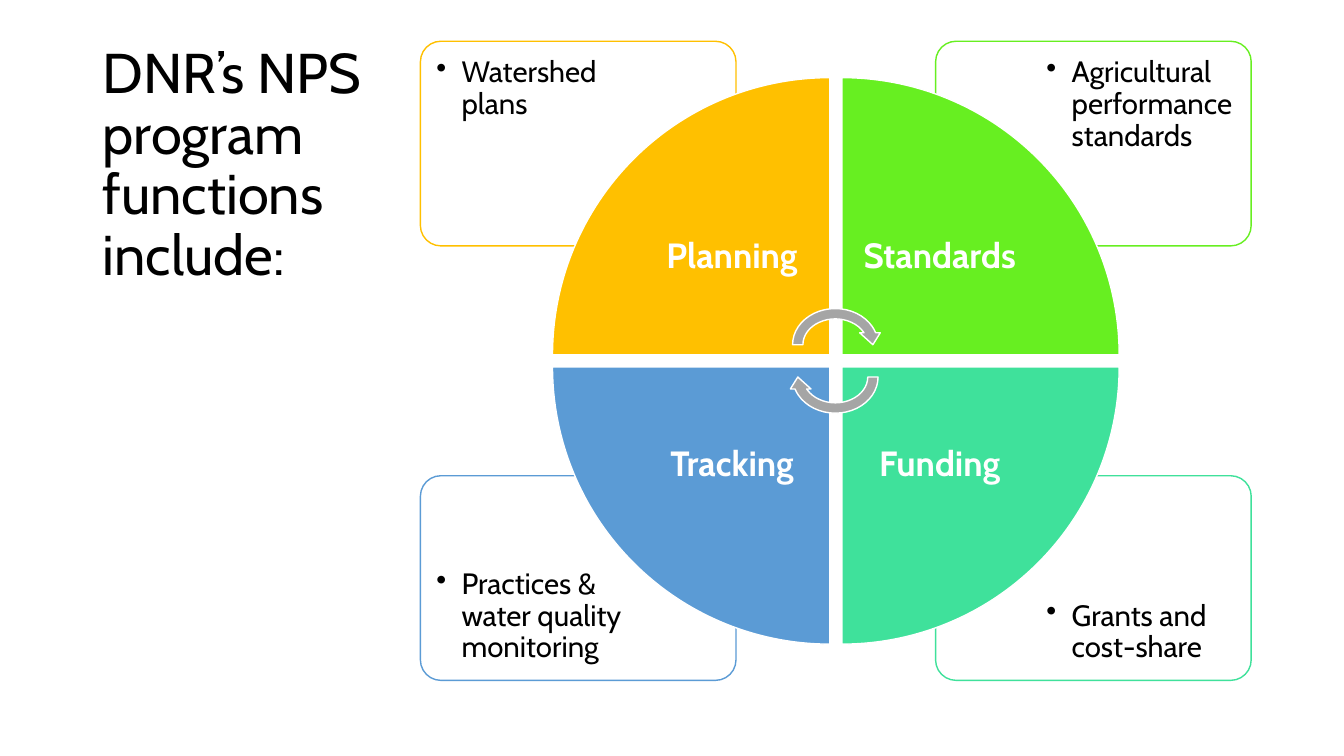
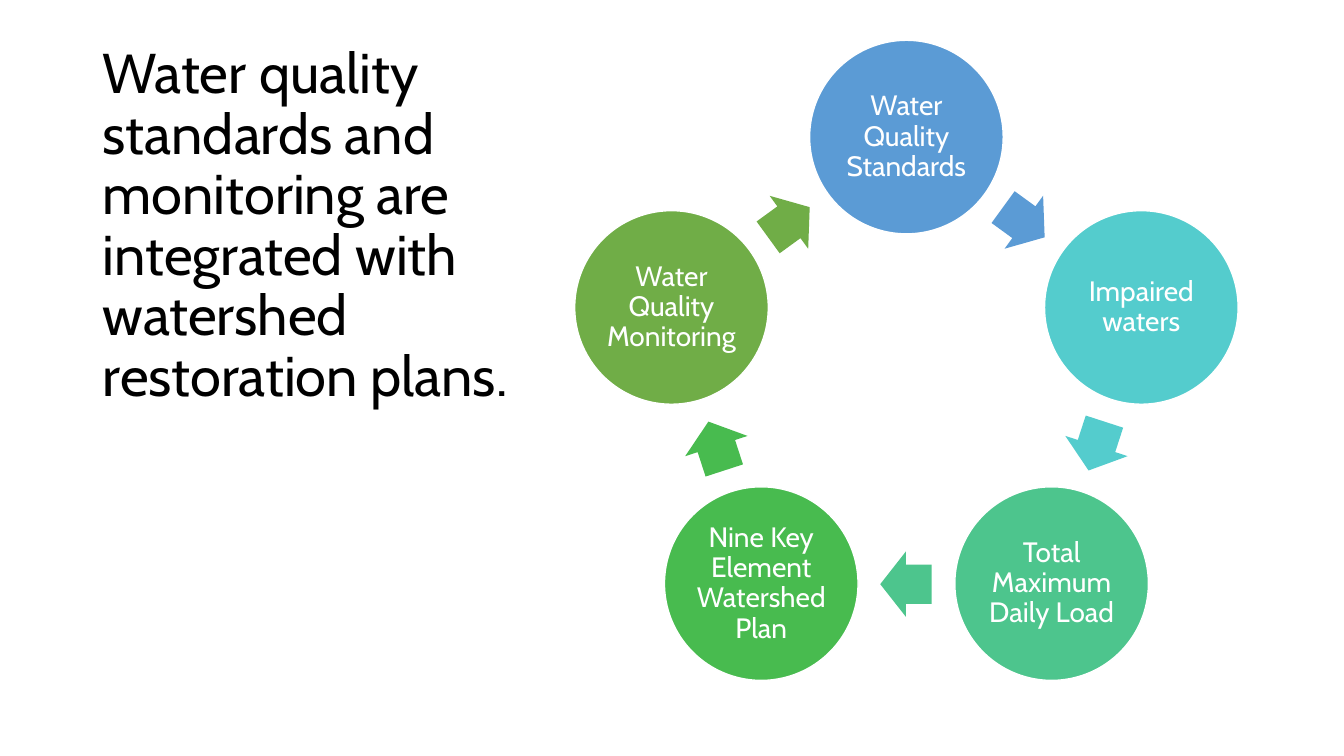
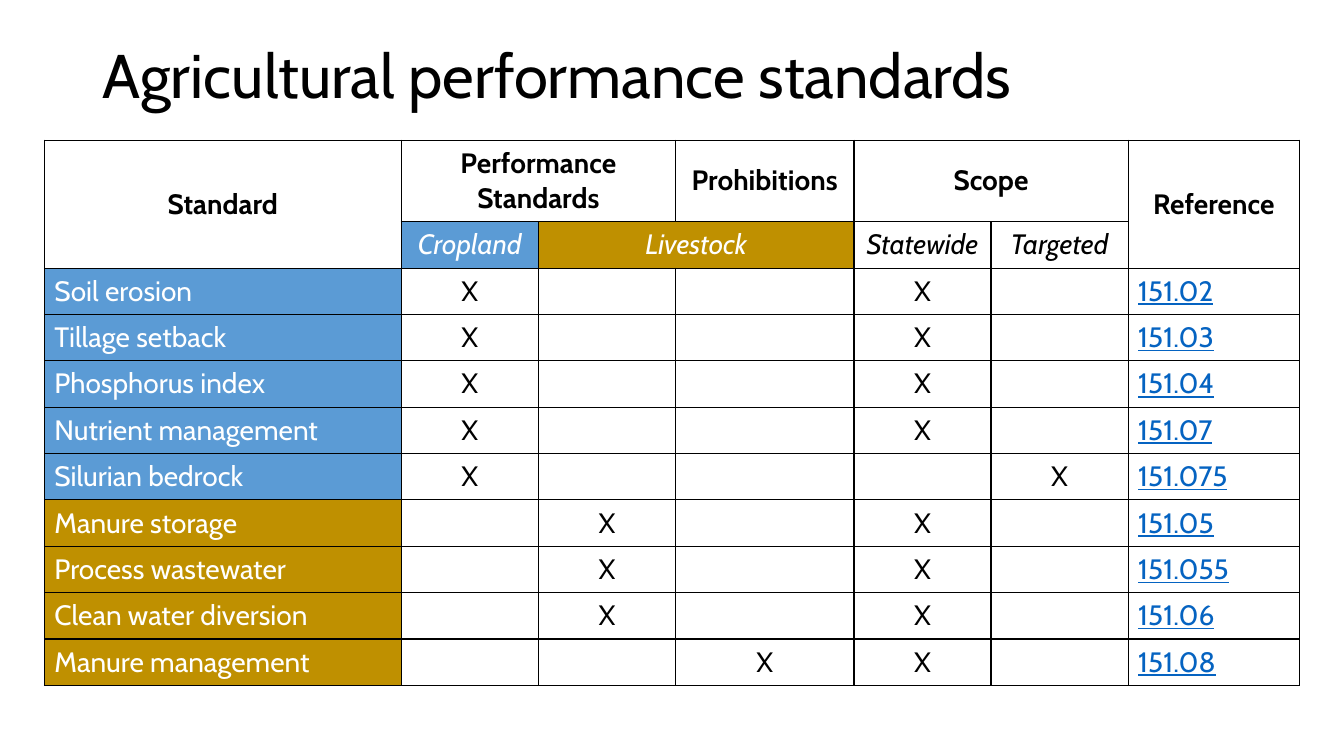
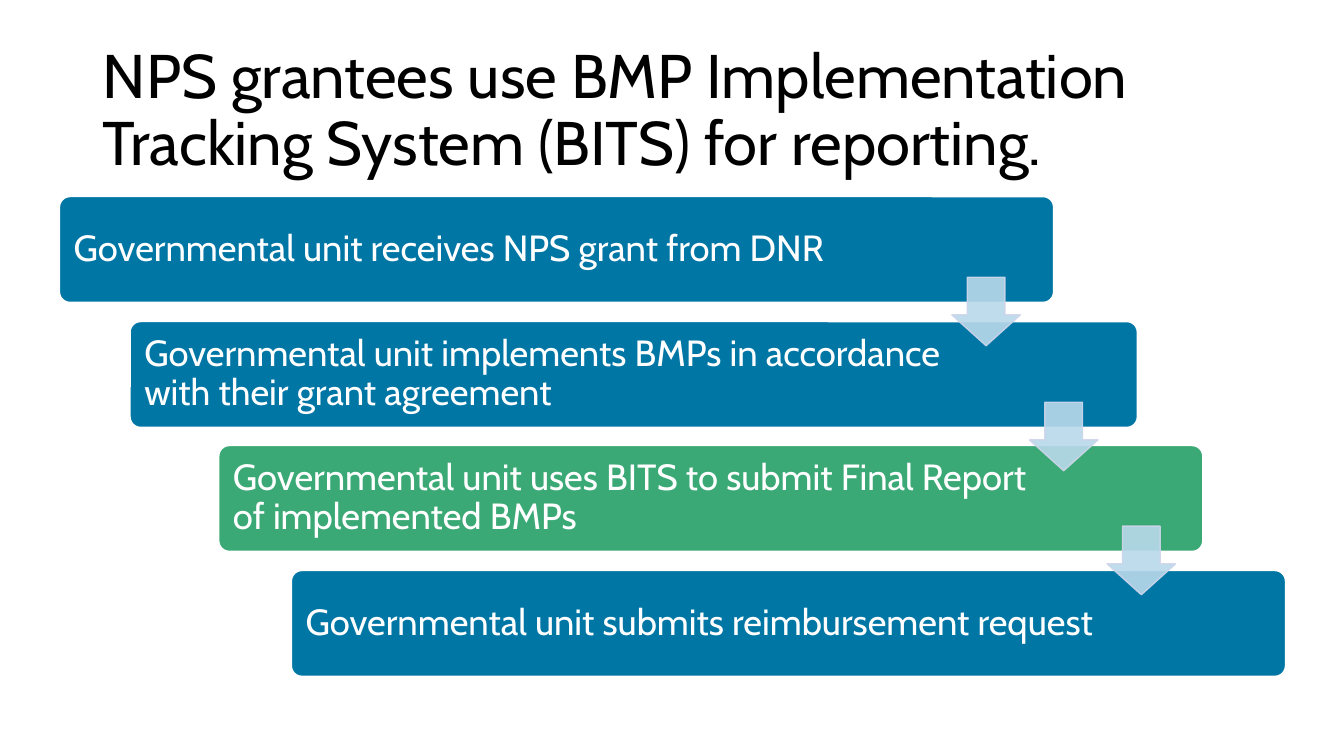
from math import cos, radians, sin

from lxml import etree
from pptx import Presentation
from pptx import util as u
from pptx.dml.color import RGBColor
from pptx.enum import shapes, text
from pptx.oxml.ns import qn

FONT = "Cabin"
BLACK, WHITE, GREY = "000000", "FFFFFF", "A5A5A5"
BLUE, GOLD, LINK = "5B9BD5", "BF9000", "0563C1"
DEEP_BLUE, GREEN = "0076A5", "3BA975"
PALE_BLUE, PALE_LINE = "B9D9EB", "CFD5EA"
SHAPE, ALIGN, ANCHOR = shapes.MSO_SHAPE, text.PP_ALIGN, text.MSO_ANCHOR


def rgb(value):
    return RGBColor.from_string(value)


def assign(obj, values):
    for name, value in values.items():
        setattr(obj, name, value)


def inches(*values):
    return [u.Inches(round(v, 2)) for v in values]


def write(tf, words, size, color=BLACK, align=ALIGN.LEFT, spacing=0.9, **font):
    p = tf.paragraphs[0]
    assign(p, {"alignment": align, "line_spacing": spacing})
    r = p.add_run()
    r.text = words
    assign(r.font, {"name": FONT, "size": u.Pt(size), **font})
    r.font.color.rgb = rgb(color)
    return p


def frame(tf, anchor=ANCHOR.MIDDLE, insets=(0.1, 0.1, 0.1, 0.1)):
    left, top, right, bottom = inches(*insets)
    assign(tf, {
        "word_wrap": True, "auto_size": text.MSO_AUTO_SIZE.NONE, "vertical_anchor": anchor,
        "margin_left": left, "margin_top": top, "margin_right": right, "margin_bottom": bottom,
    })
    return tf


def set_alpha(fill, percent):
    color = fill._xPr.find(qn("a:solidFill"))[0]
    etree.SubElement(color, qn("a:alpha")).set("val", str(percent * 1000))


def add_shape(s, kind, box, fill, line=None, adj=(), rotation=0, alpha=None):
    sp = s.shapes.add_shape(kind, *inches(*box))
    sp.shadow.inherit = False
    sp.rotation = rotation
    for i, value in enumerate(adj):
        sp.adjustments[i] = value
    sp.fill.solid()
    sp.fill.fore_color.rgb = rgb(fill)
    if line:
        sp.line.color.rgb = rgb(line)
        sp.line.width = u.Pt(1)
    else:
        sp.line.fill.background()
    if alpha:
        set_alpha(sp.fill, alpha)
    return sp


def add_slide(prs, title, box=(0.92, 0.4, 11.5, 1.45), size=44):
    s = prs.slides.add_slide(prs.slide_layouts[5])
    sp = s.shapes.title
    assign(sp, dict(zip(("left", "top", "width", "height"), inches(*box))))
    write(frame(sp.text_frame, ANCHOR.TOP, (0.1, 0.05, 0.1, 0.05)), title, size)
    return s


def add_note(s, box, words, color, right, lower):
    sp = add_shape(s, SHAPE.ROUNDED_RECTANGLE, box, WHITE, color, [0.1], alpha=90)
    insets = (1.04, 0.1, 0.1, 0.1) if right else (0.1, 0.1, 1.04, 0.1)
    tf = frame(sp.text_frame, ANCHOR.BOTTOM if lower else ANCHOR.TOP, insets)
    pPr = tf.paragraphs[0]._p.get_or_add_pPr()
    pPr.set("marL", str(u.Inches(0.25)))
    pPr.set("indent", str(u.Inches(-0.25)))
    etree.SubElement(pPr, qn("a:buChar")).set("char", "•")
    write(tf, words, 21)


def add_wheel(s, box, quarters):
    left, top, width, height = box
    cx, cy = left + width / 2, top + height / 2
    note_w, note_h, wedge, label, gap = 3.13, 2.03, 2.75, 1.94, 0.12
    for i, (_, words, color) in enumerate(quarters):
        lower, right = divmod(i, 2)
        note = (left + right * (width - note_w), top + lower * (height - note_h), note_w, note_h)
        add_note(s, note, words, color, right, lower)
    for i, (name, _, color) in enumerate(quarters):
        lower, right = divmod(i, 2)
        x = cx + gap / 2 if right else cx - gap / 2 - wedge
        y = cy + gap / 2 if lower else cy - gap / 2 - wedge
        add_shape(s, SHAPE.PIE_WEDGE, (x, y, wedge, wedge), color, WHITE,
                  rotation=(0, 90, 270, 180)[i])
        inner = wedge - label
        tb = s.shapes.add_textbox(*inches(x + (1 - right) * inner, y + (1 - lower) * inner,
                                          label, label))
        write(frame(tb.text_frame), name, 25, WHITE, ALIGN.CENTER, bold=True)
    for offset, rotation in ((-0.16, 0), (0.16, 180)):
        add_shape(s, SHAPE.CIRCULAR_ARROW, (cx - 0.475, cy + offset - 0.41, 0.95, 0.82),
                  GREY, WHITE, rotation=rotation)


def add_ring(s, box, stages):
    left, top, width, _ = box
    circle, radius, arrow_w, arrow_h = 1.92, 2.45, 0.51, 0.65
    cx, cy = left + width / 2, top + circle / 2 + radius
    turn = 360 / len(stages)

    def centred(angle, distance, w, h):
        a = radians(angle)
        return cx + distance * sin(a) - w / 2, cy - distance * cos(a) - h / 2, w, h

    for i, (words, color) in enumerate(stages):
        sp = add_shape(s, SHAPE.OVAL, centred(i * turn, radius, circle, circle), color, WHITE)
        write(frame(sp.text_frame, insets=[0.03] * 4), words, 20, WHITE, ALIGN.CENTER)
        middle = (i + 0.5) * turn
        add_shape(s, SHAPE.RIGHT_ARROW,
                  centred(middle, radius * cos(radians(turn / 2)), arrow_w, arrow_h),
                  color, adj=[0.6, 0.5], rotation=middle)


def add_borders(cell):
    tcPr = cell._tc.get_or_add_tcPr()
    for i, side in enumerate(("a:lnL", "a:lnR", "a:lnT", "a:lnB")):
        ln = etree.Element(qn(side), w=str(u.Pt(1)))
        fill = etree.SubElement(ln, qn("a:solidFill"))
        etree.SubElement(fill, qn("a:srgbClr"), val=BLACK)
        tcPr.insert(i, ln)


def fill_cell(cell, words, color=BLACK, fill=None, align=ALIGN.CENTER, **font):
    if fill:
        cell.fill.solid()
        cell.fill.fore_color.rgb = rgb(fill)
    if words:
        write(cell.text_frame, words, 20, color, align, 1.0, **font)


def add_standards_table(s, box, standards):
    columns = (3.54, 1.36, 1.36, 1.77, 1.36, 1.36, 1.7)
    heads = ("Standard", "Performance Standards", "", "Prohibitions", "Scope", "", "Reference")
    subheads = {1: ("Cropland", WHITE, BLUE), 2: ("Livestock", WHITE, GOLD),
                4: ("Statewide", BLACK, WHITE), 5: ("Targeted", BLACK, WHITE)}
    table = s.shapes.add_table(len(standards) + 2, len(columns), *inches(*box)).table
    assign(table, {"first_row": False, "horz_banding": False})
    for column, width in zip(table.columns, columns):
        column.width = u.Inches(width)
    for i, row in enumerate(table.rows):
        row.height = u.Inches(0.46 if i else 0.81)
    for cell in table.iter_cells():
        cell.vertical_anchor = ANCHOR.MIDDLE
        fill_cell(cell, "", fill=WHITE)
        add_borders(cell)
    for first, last in (((0, 0), (1, 0)), ((0, 1), (0, 2)), ((0, 4), (0, 5)),
                        ((0, 6), (1, 6)), ((1, 2), (1, 3))):
        table.cell(*first).merge(table.cell(*last))
    for c, words in enumerate(heads):
        fill_cell(table.cell(0, c), words, bold=True)
    for c, (words, color, fill) in subheads.items():
        fill_cell(table.cell(1, c), words, color, fill, italic=True)
    for r, (name, kind, scope, reference) in enumerate(standards, 2):
        fill_cell(table.cell(r, 0), name, WHITE, BLUE if kind == 1 else GOLD, ALIGN.LEFT)
        for c in (kind, scope):
            fill_cell(table.cell(r, c), "X")
        fill_cell(table.cell(r, 6), reference, LINK, align=ALIGN.LEFT, underline=True)


def add_staircase(s, box, steps):
    left, top, _, height = box
    step_h, arrow = 1.05, 0.68
    pitch = (height - step_h) / (len(steps) - 1)
    for i, (words, shift, width, color) in enumerate(steps):
        sp = add_shape(s, SHAPE.ROUNDED_RECTANGLE,
                       (left + shift, top + i * pitch, width, step_h), color, WHITE, [0.1])
        write(frame(sp.text_frame, insets=(0.11, 0.11, 1.65, 0.11)), words, 26, WHITE)
    for i in range(len(steps) - 1):
        sp = add_shape(s, SHAPE.DOWN_ARROW,
                       (left + 8.85 + i * 0.77, top + 0.8 + i * pitch, arrow, arrow),
                       PALE_BLUE, PALE_LINE, [0.55, 0.45], alpha=90)
        set_alpha(sp.line.fill, 90)


def main():
    prs = Presentation()
    assign(prs, {"slide_width": u.Inches(13.33), "slide_height": u.Inches(7.5)})

    s = add_slide(prs, "DNR’s NPS program functions include:", (0.92, 0.4, 3.98, 2.79), 40)
    s.shapes.title.width = u.Inches(3)
    add_wheel(s, (4.17, 0.41, 8.24, 6.34), [
        ("Planning", "Watershed plans", "FFC000"),
        ("Standards", "Agricultural performance standards", "67EF21"),
        ("Tracking", "Practices & water quality monitoring", BLUE),
        ("Funding", "Grants and cost-share", "3FE19B"),
    ])

    s = add_slide(prs, "Water quality standards and monitoring are integrated with "
                  "watershed restoration plans.", (0.92, 0.4, 4.26, 4.76), 40)
    add_ring(s, (5.7, 0.4, 6.58, 6.35), [
        ("Water Quality Standards", BLUE),
        ("Impaired waters", "54CCCD"),
        ("Total Maximum Daily Load", "4DC58D"),
        ("Nine Key Element Watershed Plan", "48BB4F"),
        ("Water Quality Monitoring", "70AD47"),
    ])

    s = add_slide(prs, "Agricultural performance standards")
    add_standards_table(s, (0.44, 1.39, 12.45, 5.41), [
        ("Soil erosion", 1, 4, "151.02"),
        ("Tillage setback", 1, 4, "151.03"),
        ("Phosphorus index", 1, 4, "151.04"),
        ("Nutrient management", 1, 4, "151.07"),
        ("Silurian bedrock", 1, 5, "151.075"),
        ("Manure storage", 2, 4, "151.05"),
        ("Process wastewater", 2, 4, "151.055"),
        ("Clean water diversion", 2, 4, "151.06"),
        ("Manure management", 3, 4, "151.08"),
    ])

    s = add_slide(prs, "NPS grantees use BMP Implementation Tracking System (BITS) for reporting.")
    add_staircase(s, (0.59, 1.95, 12.16, 4.76), [
        ("Governmental unit receives NPS grant from DNR", 0, 9.86, DEEP_BLUE),
        ("Governmental unit implements BMPs in accordance with their grant agreement",
         0.7, 9.99, DEEP_BLUE),
        ("Governmental unit uses BITS to submit Final Report of implemented BMPs",
         1.58, 9.76, GREEN),
        ("Governmental unit submits reimbursement request", 2.3, 9.86, DEEP_BLUE),
    ])

    prs.save("out.pptx")


if __name__ == "__main__":
    main()
